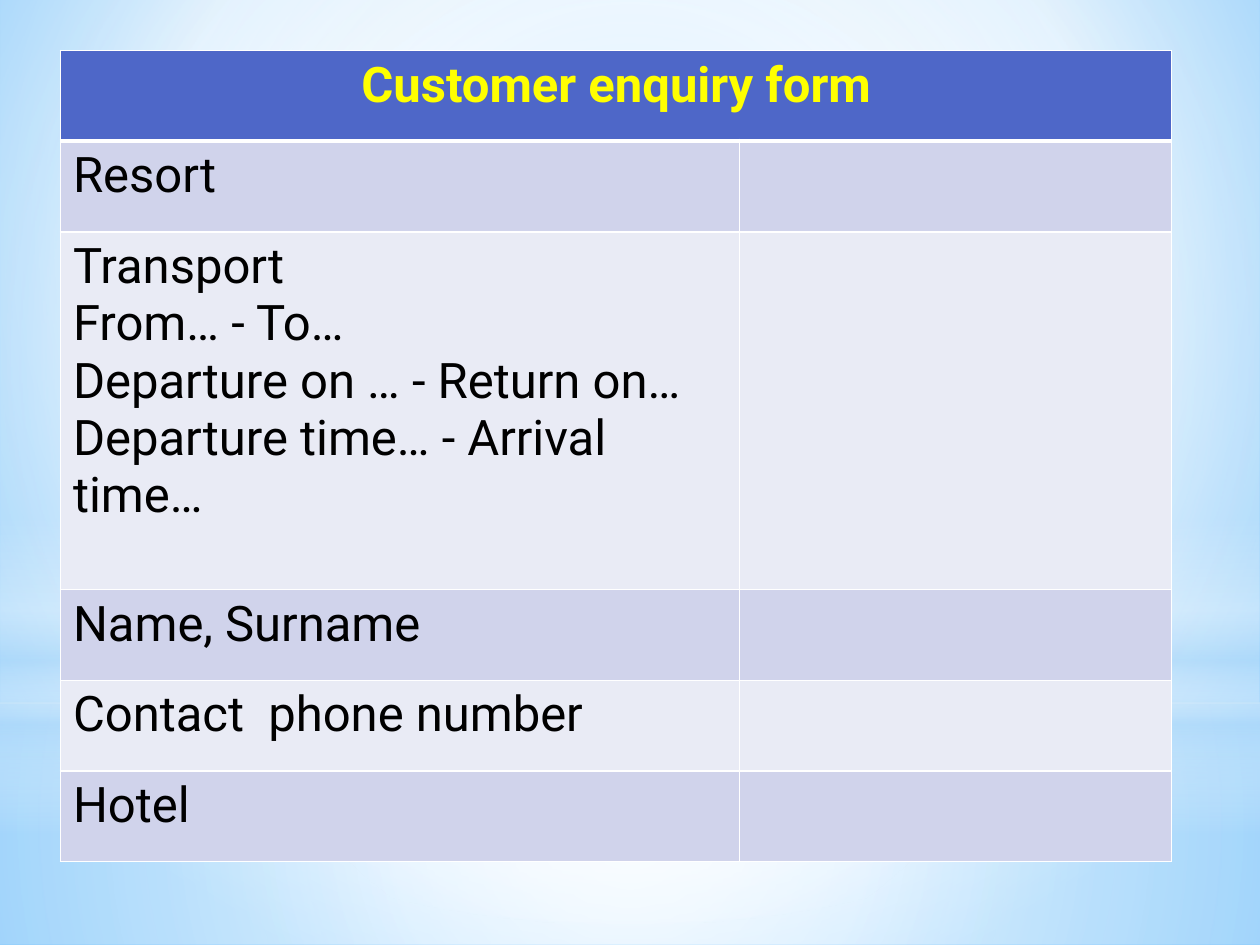
from dataclasses import dataclass
from typing import Optional

from lxml.etree import SubElement
from pptx import Presentation
from pptx.dml.color import RGBColor
from pptx.enum.shapes import MSO_SHAPE
from pptx.enum.text import PP_ALIGN
from pptx.oxml.ns import qn
from pptx.util import Inches, Pt


@dataclass
class Gradient:
    stops: list[tuple[int, str, int]]  # position %, colour, opacity %
    focus: Optional[tuple[int, int, int, int]] = (50, 50, 50, 50)
    angle: int = 0  # used when there is no focus


@dataclass
class Panel:
    shape: MSO_SHAPE
    top: float
    height: float
    gradient: Gradient


@dataclass
class Row:
    lines: list[str]
    height: float = 0.72


BACKGROUND = Gradient(
    [(0, "9ED5FF", 100), (60, "FFFFFF", 100), (100, "5BB9FF", 100)], (20, 10, 20, 60))
PANELS = [
    Panel(MSO_SHAPE.RECTANGLE, 5.58, 1.92, Gradient(
        [(0, "FFFFFF", 91), (37, "FFFFFF", 76), (100, "B4DCFA", 79)])),
    Panel(MSO_SHAPE.RECTANGLE, 0, 5.58, Gradient(
        [(0, "FFFFFF", 89), (48, "FFFFFF", 62), (100, "B4DCFA", 79)])),
    Panel(MSO_SHAPE.RECTANGLE, 4.12, 2.5, Gradient(
        [(0, "FFFFFF", 0), (29, "FFFFFF", 30), (45, "B4DCFA", 40),
         (55, "FFFFFF", 26), (65, "B4DCFA", 60), (100, "FFFFFF", 0)], None, 90)),
    Panel(MSO_SHAPE.OVAL, 1.75, 5.58, Gradient(
        [(0, "FFFFFF", 100), (56, "FFFFFF", 0)])),
]
TITLE = "Customer enquiry form"
ROWS = [
    Row([TITLE]),
    Row(["Resort"]),
    Row(["Transport", "From… - To…", "Departure on … - Return on…",
         "Departure time… - Arrival time…"], 2.84),
    Row(["Name, Surname"]),
    Row(["Contact  phone number"]),
    Row(["Hotel"]),
]
COLUMNS = [5.39, 3.43]
HEADER_FILL, BAND_FILLS = "4E67C8", ("E9EBF5", "D0D3EB")
HEADER_FORMAT = {"name": "Roboto", "size": Pt(28), "bold": True}
BODY_FORMAT = {**HEADER_FORMAT, "bold": False}


def colour(value: str) -> RGBColor:
    return RGBColor.from_string(value)


def paint_gradient(fill, owner, gradient: Gradient) -> None:
    """Give the fill the stops, opacity and direction of the gradient."""
    fill.gradient()
    element = next(owner.iter(qn("a:gradFill")))
    for child in list(element):
        element.remove(child)
    stops = SubElement(element, qn("a:gsLst"))
    for position, value, opacity in gradient.stops:
        stop = SubElement(stops, qn("a:gs"), pos=str(position * 1000))
        tint = SubElement(stop, qn("a:srgbClr"), val=value)
        if opacity < 100:
            SubElement(tint, qn("a:alpha"), val=str(opacity * 1000))
    if gradient.focus:
        route = SubElement(element, qn("a:path"), path="circle")
        sides = {side: str(part * 1000) for side, part in zip("ltrb", gradient.focus)}
        SubElement(route, qn("a:fillToRect"), **sides)
    else:
        SubElement(element, qn("a:lin"), ang=str(gradient.angle * 60000), scaled="0")


def draw_panel(page, panel: Panel) -> None:
    shape = page.shapes.add_shape(
        panel.shape, 0, Inches(panel.top), Inches(10), Inches(panel.height))
    shape.shadow.inherit = False
    shape.line.fill.background()
    paint_gradient(shape.fill, shape.element, panel.gradient)


def style_cell(cell, fill: str, bottom: int = 1, top: int = 1) -> None:
    """Set white borders, then the fill that must follow them."""
    properties = cell._tc.get_or_add_tcPr()
    for side, width in {"L": 1, "R": 1, "T": top, "B": bottom}.items():
        border = SubElement(properties, qn(f"a:ln{side}"), w=str(Pt(width)))
        solid = SubElement(border, qn("a:solidFill"))
        SubElement(solid, qn("a:srgbClr"), val="FFFFFF")
    cell.fill.solid()
    cell.fill.fore_color.rgb = colour(fill)


def write_lines(cell, lines: list[str], formats: dict, value: str, align: PP_ALIGN) -> None:
    cell.text_frame.text = "\n".join(lines)
    for para in cell.text_frame.paragraphs:
        para.alignment = align
        for span in para.runs:
            for name, setting in formats.items():
                setattr(span.font, name, setting)
            span.font.color.rgb = colour(value)


def draw_form(page) -> None:
    height = sum(row.height for row in ROWS)
    table = page.shapes.add_table(
        len(ROWS), len(COLUMNS), Inches(0.48), Inches(0.4),
        Inches(sum(COLUMNS)), Inches(height)).table
    for column, width in zip(table.columns, COLUMNS):
        column.width = Inches(width)
    for index, row in enumerate(ROWS):
        table.rows[index].height = Inches(row.height)
        header = index == 0
        fill = HEADER_FILL if header else BAND_FILLS[index % 2]
        for cell in table.rows[index].cells:
            style_cell(cell, fill, bottom=3 if header else 1, top=3 if index == 1 else 1)
        if header:
            write_lines(table.cell(0, 0), row.lines, HEADER_FORMAT, "FFFF00", PP_ALIGN.CENTER)
        else:
            write_lines(table.cell(index, 0), row.lines, BODY_FORMAT, "000000", PP_ALIGN.LEFT)
    table.cell(0, 0).merge(table.cell(0, 1))


def main() -> None:
    deck = Presentation()
    deck.slide_width, deck.slide_height = Inches(10), Inches(7.5)
    page = deck.slides.add_slide(deck.slide_layouts[6])

    # Sky backdrop
    paint_gradient(page.background.fill, page.element, BACKGROUND)
    for panel in PANELS:
        draw_panel(page, panel)

    # Enquiry form
    draw_form(page)
    deck.save("out.pptx")


if __name__ == "__main__":
    main()
